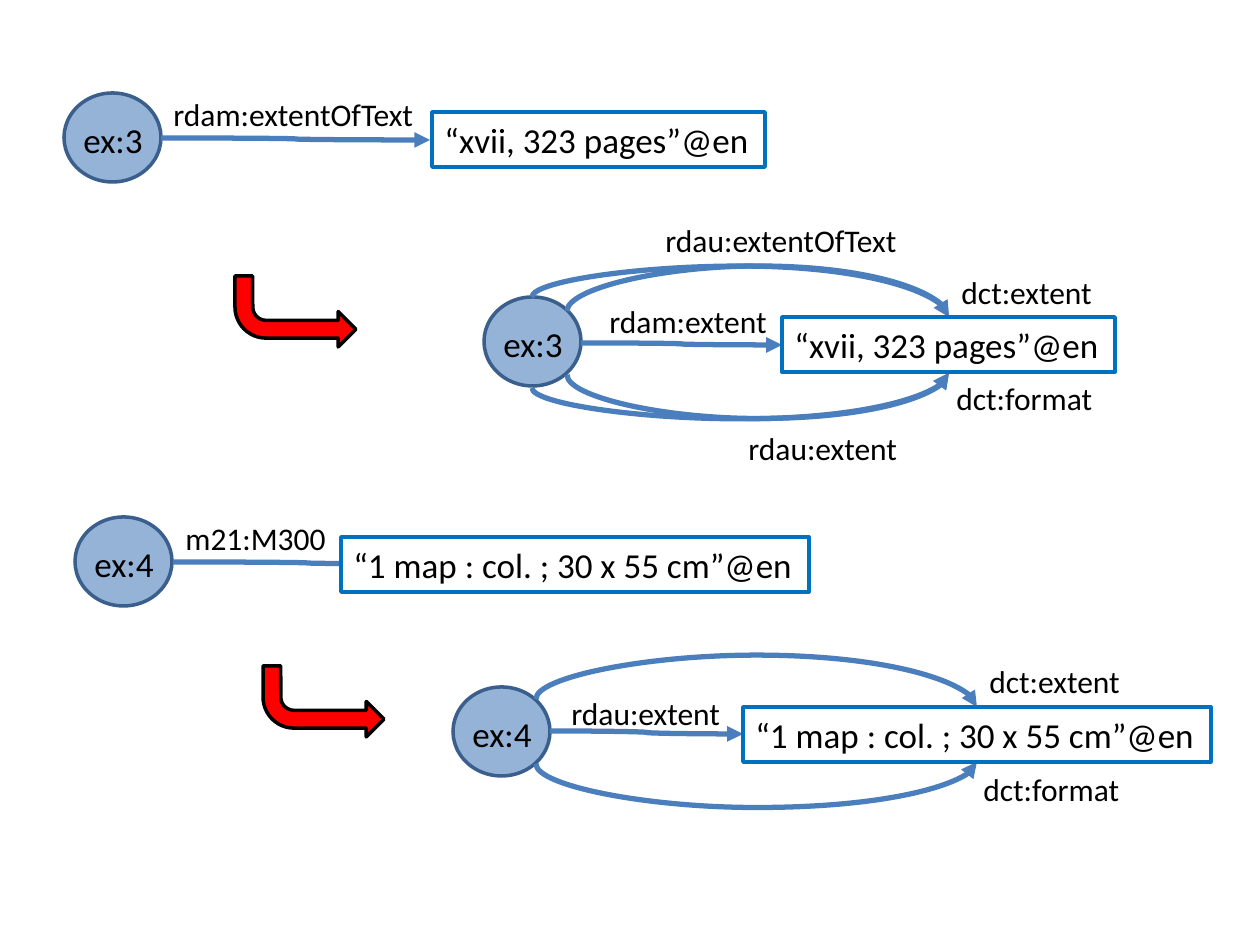
"""Build a slide of RDF graphs showing how extent statements are mapped."""
import pptx
import pptx.util
import pptx.dml.color
import pptx.enum.shapes
import pptx.enum.text
import pptx.oxml
import pptx.oxml.ns

PX = 914400 / 126
COLORS = {"node": "95B3D7", "node_line": "3A5F8C", "edge": "4B7EBC", "box": "FFFFFF",
          "box_line": "0070C0", "arrow": "FF0000", "black": "000000"}
RGB = {k: pptx.dml.color.RGBColor.from_string(v) for k, v in COLORS.items()}
SHAPE = pptx.enum.shapes.MSO_SHAPE
FRAME = {"word_wrap": False, "auto_size": pptx.enum.text.MSO_AUTO_SIZE.SHAPE_TO_FIT_TEXT,
         "vertical_anchor": pptx.enum.text.MSO_ANCHOR.TOP}

prs = pptx.Presentation()
prs.slide_width, prs.slide_height = pptx.util.Inches(10), pptx.util.Inches(7.5)
s = prs.slides.add_slide(prs.slide_layouts[6])


def add_box(box, kind=None, fill=None, line=None, text=None, size=18):
    """Add a preset shape, or a text box when no kind is given."""
    box = [round(v * PX) for v in box]
    if kind is None:
        sp = s.shapes.add_textbox(*box)
    else:
        sp = s.shapes.add_shape(kind, *box)
        sp.shadow.inherit = False
        sp.fill.solid()
        sp.fill.fore_color.rgb = RGB[fill]
        sp.line.color.rgb = RGB[line]
        sp.line.width = pptx.util.Pt(2)
    if text:
        tf = sp.text_frame
        for name, value in FRAME.items():
            setattr(tf, name, value)
        p = tf.paragraphs[0]
        p.alignment = pptx.enum.text.PP_ALIGN.LEFT
        r = p.add_run()
        r.text = text
        for name, value in {"name": "Calibri", "size": pptx.util.Pt(size)}.items():
            setattr(r.font, name, value)
        r.font.color.rgb = RGB["black"]
    return sp


def add_curve(x1, y1, x2, y2, peak=None):
    """Add a curved arrow, arching to the height of peak when given."""
    c = s.shapes.add_connector(pptx.enum.shapes.MSO_CONNECTOR.CURVE,
                               *[round(v * PX) for v in (x1, y1, x2, y2)])
    c.line.color.rgb = RGB["edge"]
    c.line.width = pptx.util.Pt(3)
    spPr = c._element.spPr
    tail = pptx.oxml.parse_xml(f'<a:tailEnd {pptx.oxml.ns.nsdecls("a")} type="triangle"/>')
    spPr.find(pptx.oxml.ns.qn("a:ln")).append(tail)
    spPr.append(pptx.oxml.parse_xml(f'<a:effectLst {pptx.oxml.ns.nsdecls("a")}/>'))
    if peak is not None:
        w, h = abs(y2 - y1), x2 - x1
        box = {"left": (x1 + x2 - w) / 2, "top": (y1 + y2 - h) / 2, "width": w, "height": h}
        for name, value in box.items():
            setattr(c, name, round(value * PX))
        xfrm = spPr.find(pptx.oxml.ns.qn("a:xfrm"))
        above = peak < y1
        for name, value in {"rot": str((270 if above else 90) * 60000), "flipH": "1",
                            "flipV": "0" if above else "1"}.items():
            xfrm.set(name, value)
        adj = round((peak - y1) / (y2 - y1) * 100000)
        spPr.find(".//" + pptx.oxml.ns.qn("a:avLst")).append(pptx.oxml.parse_xml(
            f'<a:gd {pptx.oxml.ns.nsdecls("a")} name="adj1" fmla="val {adj}"/>'))


for x, y, name in [(64, 93, "ex:3"), (484, 297, "ex:3"), (75, 517, "ex:4"), (453, 687, "ex:4")]:
    add_box((x, y, 97, 89), SHAPE.OVAL, "node", "node_line")
    add_box((x + 7, y + 19, 86, 55), text=name, size=20)

for curve in [(161, 138, 430, 140), (581, 343, 782, 345), (173, 562, 441, 564),
              (550, 731, 743, 734),
              (567, 311, 949, 317, 266), (532, 388, 949, 373, 419),
              (567, 375, 949, 373, 419), (532, 297, 949, 317, 266),
              (536, 699, 977, 707, 655), (536, 764, 977, 762, 808)]:
    add_curve(*curve)

PAGES, MAP = "“xvii, 323 pages”@en", "“1 map : col. ; 30 x 55 cm”@en"
for x, y, w, value in [(432, 112, 333, PAGES), (782, 317, 333, PAGES),
                       (341, 537, 468, MAP), (743, 707, 468, MAP)]:
    add_box((x, y, w, 55), SHAPE.RECTANGLE, "box", "box_line", value, 20)

for x, y, w, label in [(161, 89, 267, "rdam:extentOfText"), (597, 296, 184, "rdam:extent"),
                       (949, 267, 158, "dct:extent"), (944, 373, 163, "dct:format"),
                       (736, 423, 176, "rdau:extent"), (653, 215, 260, "rdau:extentOfText"),
                       (173, 513, 168, "m21:M300"), (559, 688, 176, "rdau:extent"),
                       (977, 656, 158, "dct:extent"), (971, 764, 163, "dct:format")]:
    add_box((x, y, w, 50), text=label)

for x, y in [(235, 276), (263, 666)]:
    sp = add_box((x, y, 121, 71), SHAPE.BENT_ARROW, "arrow", "black")
    sp._element.spPr.find(pptx.oxml.ns.qn("a:xfrm")).set("flipV", "1")

prs.save("out.pptx")
